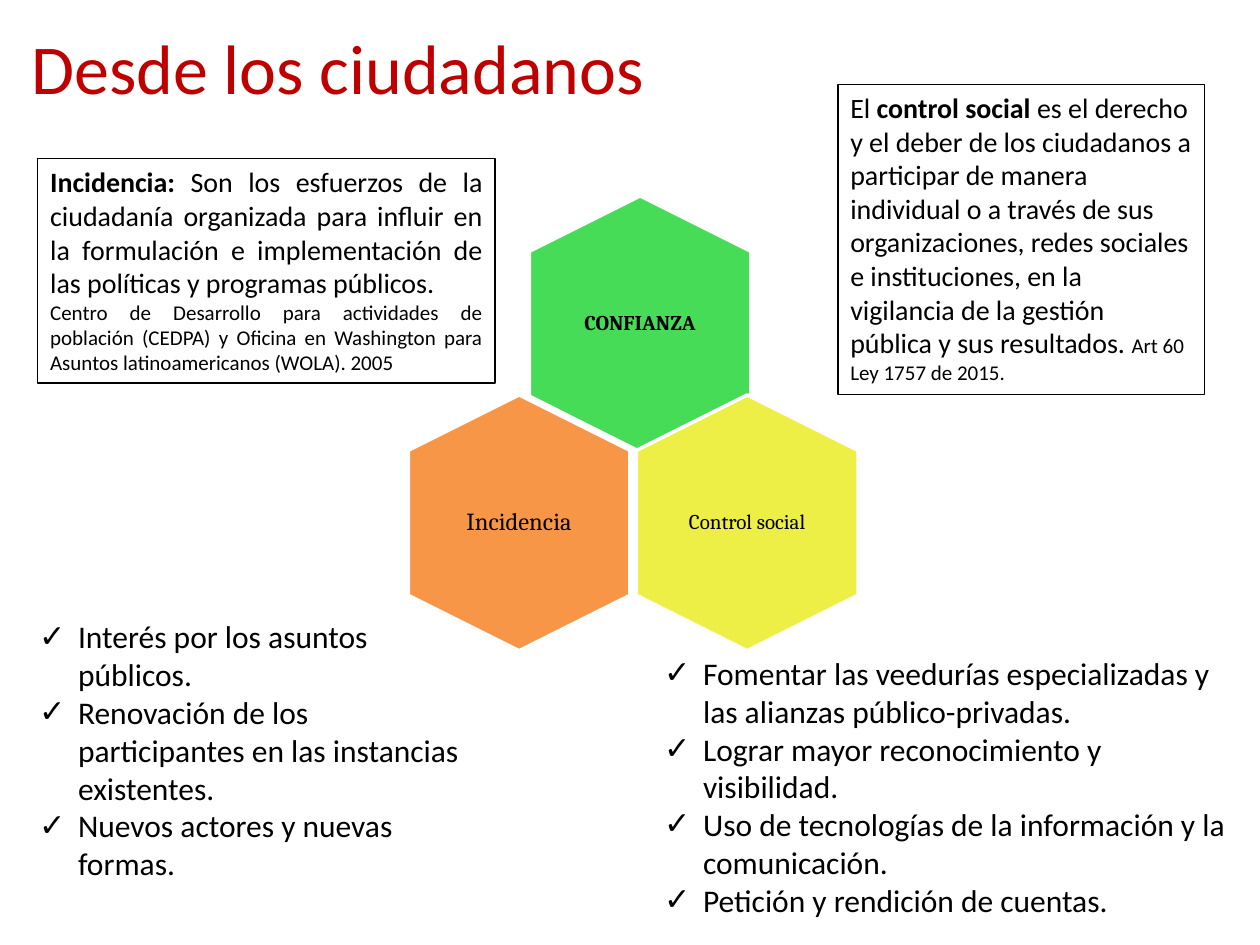
from pptx import Presentation
from pptx.dml.color import RGBColor as RGB
from pptx.enum.shapes import MSO_SHAPE as Shape
from pptx.enum.text import MSO_ANCHOR as Anchor, MSO_AUTO_SIZE as Auto, PP_ALIGN as Align
from pptx.oxml.ns import qn
from pptx.util import Inches, Pt
from lxml.etree import SubElement

THEME = {
    "font": "Calibri", "hex_font": "Cambria",
    "ink": "000000", "title": "C00000", "white": "FFFFFF",
    "green": "47DC57", "orange": "F79646", "yellow": "EEEF46",
    "title_size": 40, "list_size": 18, "note_size": 16, "small_size": 12,
}

TITLE = "Desde los ciudadanos"

# label, fill, size, bold, centre x, centre y
CELLS = [
    ("CONFIANZA", "green", 12, True, 5.08, 2.57),
    ("Incidencia", "orange", 14, False, 4.12, 4.15),
    ("Control social", "yellow", 12, False, 5.93, 4.15),
]
HEX_W, HEX_H = 2.03, 1.76
LABEL_W, LABEL_H = 1.21, 1.39

# box, alignment, paragraphs of (text, size, bold) runs
NOTES = [
    ((6.65, 0.67, 2.91, 2.46), Align.LEFT, [
        [("El ", "note_size", False),
         ("control social ", "note_size", True),
         ("es el derecho y el deber de los ciudadanos a participar de manera "
          "individual o a través de sus organizaciones, redes sociales e "
          "instituciones, en la vigilancia de la gestión pública y sus "
          "resultados. ", "note_size", False),
         ("Art 60 Ley 1757 de 2015.", "small_size", False)],
    ]),
    ((0.3, 1.26, 3.63, 1.78), Align.JUSTIFY, [
        [("Incidencia: ", "note_size", True),
         ("Son los esfuerzos de la ciudadanía organizada para influir en la "
          "formulación e implementación de las políticas y programas "
          "públicos.", "note_size", False)],
        [("Centro de Desarrollo para actividades de población (CEDPA) y "
          "Oficina en Washington para Asuntos latinoamericanos (WOLA). 2005",
          "small_size", False)],
    ]),
]

LISTS = [
    ((0.21, 4.85, 3.61, 2.22), [
        "Interés por los asuntos públicos.",
        "Renovación de los participantes en las instancias existentes.",
        "Nuevos actores y nuevas formas.",
    ]),
    ((5.17, 5.14, 4.66, 2.22), [
        "Fomentar las veedurías especializadas y las alianzas público-privadas.",
        "Lograr mayor reconocimiento y visibilidad.",
        "Uso de tecnologías de la información y la comunicación.",
        "Petición y rendición de cuentas.",
    ]),
]


def color(name):
    return RGB.from_string(THEME[name])


def style(font, size, ink="ink", face="font", bold=False):
    font.name, font.size, font.bold = THEME[face], Pt(size), bold
    font.color.rgb = color(ink)


def place(shape, box):
    shape.left, shape.top, shape.width, shape.height = map(Inches, box)


def centre(x, y, w, h):
    """Box of the given size around a centre point."""
    return [Inches(n) for n in (x - w / 2, y - h / 2, w, h)]


def add_title(slide):
    title = slide.shapes.title
    place(title, (0.15, 0.14, 9, 0.77))
    frame = title.text_frame
    frame.text = TITLE
    frame.auto_size = Auto.NONE
    para = frame.paragraphs[0]
    para.alignment = Align.LEFT
    style(para.runs[0].font, THEME["title_size"], "title")


def add_cell(slide, label, fill, size, bold, x, y):
    """Hexagon standing on its tip, with an upright label."""
    cell = slide.shapes.add_shape(Shape.HEXAGON, *centre(x, y, HEX_W, HEX_H))
    cell.rotation = 90
    cell.adjustments[0] = 0.25
    cell.shadow.inherit = False
    cell.fill.solid()
    cell.fill.fore_color.rgb = color(fill)
    cell.line.color.rgb = color("white")
    cell.line.width = Pt(2)

    text = slide.shapes.add_textbox(*centre(x, y, LABEL_W, LABEL_H))
    frame = text.text_frame
    frame.word_wrap = True
    frame.vertical_anchor = Anchor.MIDDLE
    frame.margin_left = frame.margin_right = Inches(0.05)
    frame.margin_top = frame.margin_bottom = Inches(0.05)
    frame.text = label
    para = frame.paragraphs[0]
    para.alignment = Align.CENTER
    para.line_spacing = 0.9
    style(para.runs[0].font, size, face="hex_font", bold=bold)


def add_note(slide, box, align, paras):
    note = slide.shapes.add_textbox(*map(Inches, box))
    note.line.color.rgb = color("ink")
    note.line.width = Pt(0.75)
    frame = note.text_frame
    frame.word_wrap = True
    for i, parts in enumerate(paras):
        para = frame.add_paragraph() if i else frame.paragraphs[0]
        para.alignment = align
        for text, size, bold in parts:
            run = para.add_run()
            run.text = text
            style(run.font, THEME[size], bold=bold)


def add_list(holder, box, items):
    place(holder, box)
    frame = holder.text_frame
    frame.text = "\n".join(items)
    frame.auto_size = Auto.NONE
    for para in frame.paragraphs:
        props = para._p.get_or_add_pPr()
        props.set("marL", str(Inches(0.31)))
        props.set("indent", str(-Inches(0.31)))
        SubElement(props, qn("a:buChar")).set("char", "✓")
        para.space_before = Pt(0)
        style(para.runs[0].font, THEME["list_size"])


def main():
    deck = Presentation()
    deck.slide_width, deck.slide_height = Inches(10), Inches(7.5)
    slide = deck.slides.add_slide(deck.slide_layouts.get_by_name("Two Content"))
    add_title(slide)
    for num, (box, items) in enumerate(LISTS, 1):
        add_list(slide.placeholders[num], box, items)
    for cell in CELLS:
        add_cell(slide, *cell)
    for note in NOTES:
        add_note(slide, *note)
    deck.save("out.pptx")


if __name__ == "__main__":
    main()
